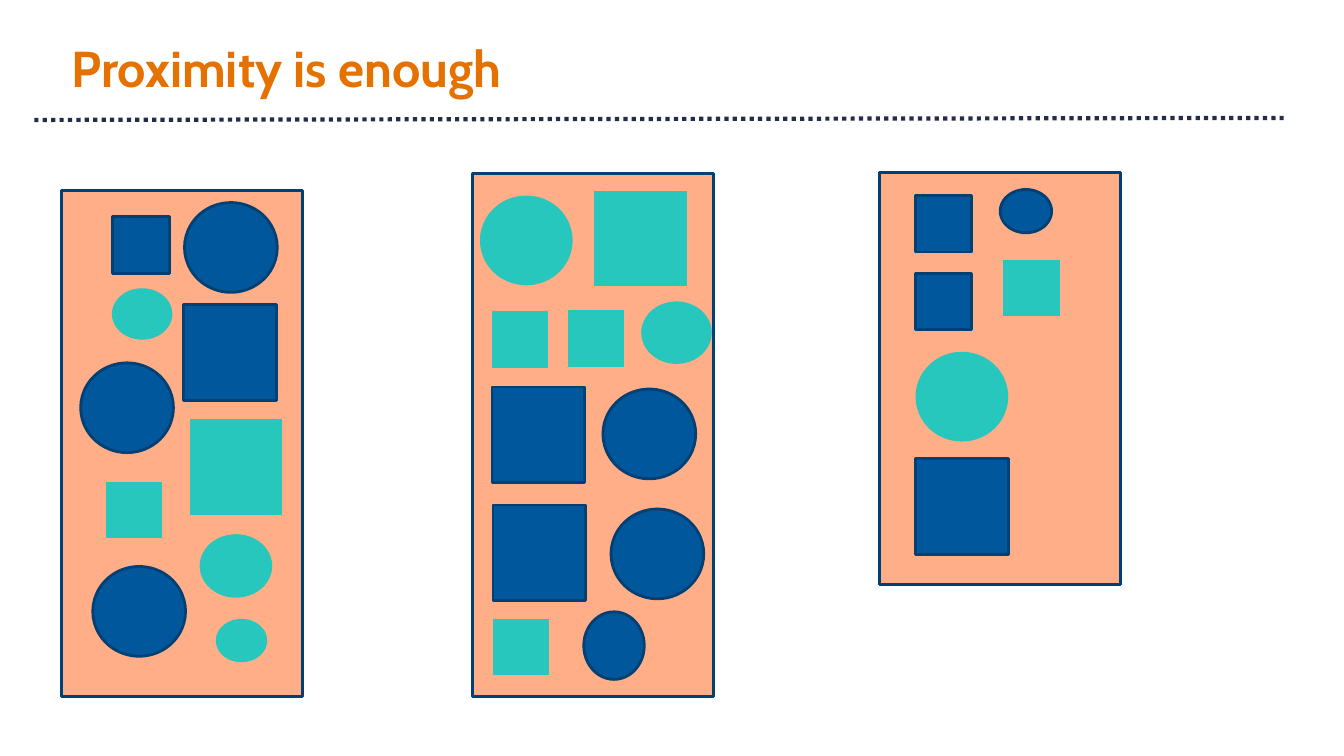
"""Build a slide showing that proximity alone groups mixed shapes."""
from dataclasses import dataclass

import lxml.etree
import pptx
import pptx.dml.color
import pptx.enum.dml
import pptx.enum.shapes
import pptx.enum.text
import pptx.oxml.ns
import pptx.util

Inches = pptx.util.Inches
Pt = pptx.util.Pt
RGB = pptx.dml.color.RGBColor.from_string
MSO_SHAPE = pptx.enum.shapes.MSO_SHAPE


@dataclass(frozen=True)
class Theme:
    font: str = "Cabin"
    title_size: int = 36
    title: str = "E57200"
    rule: str = "232D4B"
    panel: str = "FFAE88"
    blue: str = "01579B"
    outline: str = "014073"
    teal: str = "27C7BD"
    rule_width: int = 3
    outline_width: int = 2


class SlideBuilder:
    def __init__(self, prs, theme):
        self.theme = theme
        self.slide = prs.slides.add_slide(prs.slide_layouts[5])

    def title(self, text, left, top, width, height):
        sp = self.slide.shapes.title
        sp.left, sp.top = Inches(left), Inches(top)
        sp.width, sp.height = Inches(width), Inches(height)
        tf = sp.text_frame
        tf.text = text
        tf.word_wrap = True
        tf.vertical_anchor = pptx.enum.text.MSO_ANCHOR.MIDDLE
        tf.margin_left = tf.margin_right = Inches(0.1)
        tf.margin_top = tf.margin_bottom = Inches(0.1)
        p = tf.paragraphs[0]
        p.alignment = pptx.enum.text.PP_ALIGN.LEFT
        p.line_spacing = 0.9
        p.font.name = self.theme.font
        p.font.size = Pt(self.theme.title_size)
        p.font.bold = True
        p.font.color.rgb = RGB(self.theme.title)

    def dotted_rule(self, x1, y1, x2, y2):
        line = self.slide.shapes.add_connector(
            pptx.enum.shapes.MSO_CONNECTOR.STRAIGHT,
            Inches(x1), Inches(y1), Inches(x2), Inches(y2))
        line.line.color.rgb = RGB(self.theme.rule)
        line.line.width = Pt(self.theme.rule_width)
        line.line.dash_style = pptx.enum.dml.MSO_LINE.ROUND_DOT
        lxml.etree.SubElement(line._element.spPr, pptx.oxml.ns.qn("a:effectLst"))

    def shape(self, kind, fill, left, top, width, height):
        sp = self.slide.shapes.add_shape(
            kind, Inches(left), Inches(top), Inches(width), Inches(height))
        sp.shadow.inherit = False
        sp.fill.solid()
        sp.fill.fore_color.rgb = RGB(fill)
        if fill == self.theme.teal:
            sp.line.fill.background()
        else:
            sp.line.color.rgb = RGB(self.theme.outline)
            sp.line.width = Pt(self.theme.outline_width)

    def panel(self, left, top, height):
        self.shape(MSO_SHAPE.RECTANGLE, self.theme.panel, left, top, 2.39, height)

    def square(self, fill, left, top, size):
        self.shape(MSO_SHAPE.FLOWCHART_PROCESS, fill, left, top, *size)

    def circle(self, fill, left, top, size):
        self.shape(MSO_SHAPE.OVAL, fill, left, top, *size)


BIG_SQUARE = (0.92, 0.95)
SMALL_SQUARE = (0.56, 0.56)
BIG_CIRCLE = (0.92, 0.89)
SMALL_CIRCLE = (0.51, 0.43)

THEME = Theme()
BLUE, TEAL = THEME.blue, THEME.teal

PANELS = [(0.61, 1.89, 5.02), (4.69, 1.72, 5.19), (8.72, 1.71, 4.09)]

SQUARES = [
    (BLUE, 1.12, 2.15, SMALL_SQUARE),
    (BLUE, 1.82, 3.02, BIG_SQUARE),
    (TEAL, 1.88, 4.16, BIG_SQUARE),
    (TEAL, 1.05, 4.78, SMALL_SQUARE),
    (TEAL, 5.89, 1.89, BIG_SQUARE),
    (TEAL, 4.88, 3.09, SMALL_SQUARE),
    (TEAL, 5.63, 3.08, SMALL_SQUARE),
    (BLUE, 4.88, 3.84, BIG_SQUARE),
    (BLUE, 4.89, 5.01, BIG_SQUARE),
    (TEAL, 4.89, 6.14, SMALL_SQUARE),
    (BLUE, 9.08, 1.94, SMALL_SQUARE),
    (BLUE, 9.08, 2.71, SMALL_SQUARE),
    (TEAL, 9.95, 2.58, SMALL_SQUARE),
    (BLUE, 9.08, 4.55, BIG_SQUARE),
]

CIRCLES = [
    (BLUE, 1.83, 2.01, BIG_CIRCLE),
    (TEAL, 1.11, 2.86, (0.6, 0.51)),
    (BLUE, 0.8, 3.6, BIG_CIRCLE),
    (TEAL, 1.98, 5.3, (0.72, 0.63)),
    (BLUE, 0.92, 5.62, BIG_CIRCLE),
    (TEAL, 2.14, 6.14, SMALL_CIRCLE),
    (TEAL, 4.76, 1.94, BIG_CIRCLE),
    (TEAL, 6.36, 2.99, (0.7, 0.62)),
    (BLUE, 5.98, 3.86, BIG_CIRCLE),
    (BLUE, 6.06, 5.05, BIG_CIRCLE),
    (BLUE, 5.79, 6.07, (0.6, 0.67)),
    (BLUE, 9.92, 1.88, SMALL_CIRCLE),
    (TEAL, 9.08, 3.49, BIG_CIRCLE),
]


def main():
    prs = pptx.Presentation()
    prs.slide_width, prs.slide_height = Inches(13.33), Inches(7.5)
    s = SlideBuilder(prs, THEME)
    s.dotted_rule(0.34, 1.19, 12.73, 1.17)
    s.title("Proximity is enough", 0.61, 0.24, 12.12, 0.93)
    for panel in PANELS:
        s.panel(*panel)
    for square in SQUARES:
        s.square(*square)
    for circle in CIRCLES:
        s.circle(*circle)
    prs.save("out.pptx")


if __name__ == "__main__":
    main()
